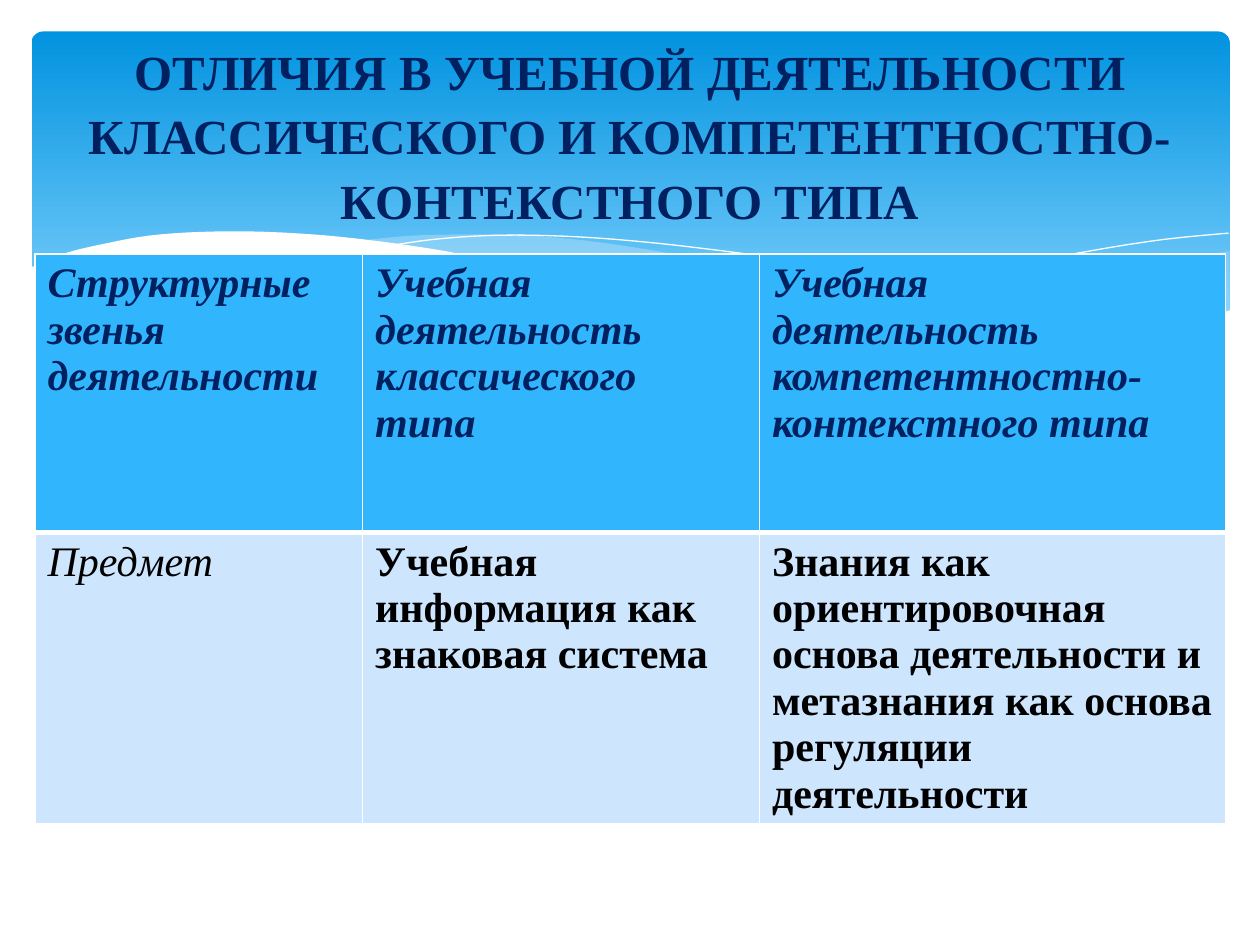
"""Build a slide comparing classical and competence-contextual learning activity."""
from lxml import etree
from pptx import Presentation
from pptx import util as u
from pptx.dml.color import RGBColor
from pptx.enum import shapes, text
from pptx.oxml import ns

WHITE = RGBColor(0xFF, 0xFF, 0xFF)
BLACK = RGBColor(0, 0, 0)
NAVY = RGBColor(0x00, 0x20, 0x60)
SKY_TOP = RGBColor(0x02, 0x93, 0xE0)
SKY_BOTTOM = RGBColor(0x83, 0xD3, 0xFE)
MIST = RGBColor(0xC6, 0xE7, 0xFC)
HEADER_BLUE = RGBColor(0x31, 0xB6, 0xFD)
BODY_BLUE = RGBColor(0xCE, 0xE5, 0xFE)

TITLE = ("ОТЛИЧИЯ В УЧЕБНОЙ ДЕЯТЕЛЬНОСТИ КЛАССИЧЕСКОГО "
         "И КОМПЕТЕНТНОСТНО-КОНТЕКСТНОГО ТИПА")
HEADINGS = ["Структурные звенья деятельности",
            "Учебная\nдеятельность классического типа",
            "Учебная\nдеятельность компетентностно-контекстного типа"]
SUBJECT = ["Предмет",
           "Учебная информация как знаковая система",
           "Знания как ориентировочная основа деятельности и метазнания "
           "как основа регуляции деятельности"]

RIGHT_SWELL = [(702.7, 143.3), (673.2, 149), (641.5, 155.5), (599, 165.6),
               (542.2, 178.6), (475.9, 190.8)]
RIGHT_TROUGH = [(475.9, 190.8), (517, 195.8), (553.7, 199.4), (586, 200.2),
                (621.4, 198), (651.6, 193.7), (678.2, 186.5), (702.7, 177.8)]
MIDDLE_SWELL = [(643, 196.6), (581, 187.2), (533.5, 178.6), (481, 166.3),
                (441.4, 157), (409.7, 149.8), (370, 142.6), (334.8, 137.5),
                (302.4, 134.6), (273.6, 133.9), (236.2, 134.6), (205.9, 137.5)]
MIDDLE_TROUGH = [(205.9, 137.5), (246.2, 143.3), (290.9, 151.9), (323.3, 159.8),
                 (381.6, 172.8), (432.7, 183.6), (478.8, 191.5), (519.8, 197.3),
                 (565.2, 200.2), (603.4, 200.2), (643, 196.6)]
LONG_RIPPLE = [(222.5, 140.4), (247.7, 136.8), (278.6, 134.6), (311.8, 134.6),
               (352, 136.8), (400.3, 141.8), (457.9, 149.8), (523.4, 162.7),
               (572.4, 173.5), (653, 195.8)]
SHORT_RIPPLE = [(441.4, 185), (500.4, 169.2), (558.7, 155.5), (623.5, 143.3),
                (665.3, 136.8), (702, 133.2)]
SHORE = [(703.4, 177.1), (669.6, 188.6), (630, 196.6), (582.5, 199.4),
         (535.7, 197.3), (481, 190.8), (416.9, 180), (362.2, 167.8),
         (321.8, 158.4), (281.5, 149), (244, 141.8), (195.1, 135.4),
         (151.9, 132.5), (116, 132.5), (85.7, 134.6), (61.2, 139),
         (37.4, 144.7), (16.6, 153.4)]
SHORE_BASE = [(16.6, 236.9), (703.4, 236.9)]


def smooth(knots, steps=4):
    """Return points of a Catmull-Rom curve through the knots."""
    ends = [knots[0], *knots, knots[-1]]
    points = [knots[0]]
    for before, start, stop, after in zip(ends, ends[1:], ends[2:], ends[3:]):
        for step in range(1, steps + 1):
            t = step / steps
            points.append(tuple(
                b + (c - a) * t / 2
                + (2 * a - 5 * b + 4 * c - d) * t ** 2 / 2
                + (3 * b - a - 3 * c + d) * t ** 3 / 2
                for a, b, c, d in zip(before, start, stop, after)))
    return points


def write(frame, wording, size=24, color=NAVY, bold=True, italic=False,
          align=text.PP_ALIGN.LEFT, spacing=1.0, font="Times New Roman"):
    """Fill a text frame with uniformly formatted paragraphs."""
    frame.word_wrap = True
    frame.text = wording
    for paragraph in frame.paragraphs:
        paragraph.alignment = align
        paragraph.line_spacing = spacing
        for run in paragraph.runs:
            run.font.name = font
            run.font.size = u.Pt(size)
            run.font.bold = bold
            run.font.italic = italic
            run.font.color.rgb = color


class Deck:
    """Hold the presentation style and the current slide."""

    def __init__(self, width, height):
        self.show = Presentation()
        self.show.slide_width = u.Pt(width)
        self.show.slide_height = u.Pt(height)
        self.slide = self.show.slides.add_slide(self.show.slide_layouts[6])

    def banner(self, *box):
        """Add the rounded gradient panel."""
        sky = self.slide.shapes.add_shape(
            shapes.MSO_SHAPE.ROUNDED_RECTANGLE, *map(u.Pt, box))
        sky.adjustments[0] = 0.034
        sky.shadow.inherit = False
        sky.line.fill.background()
        sky.fill.gradient()
        sky.fill.gradient_angle = 270
        stops = zip(sky.fill.gradient_stops, (SKY_TOP, SKY_BOTTOM), (0, 0.9))
        for stop, color, position in stops:
            stop.color.rgb = color
            stop.position = position

    def wave(self, points, color, opacity=100):
        """Add a filled wave."""
        wave = self.outline(points, True)
        wave.line.fill.background()
        wave.fill.solid()
        wave.fill.fore_color.rgb = color
        if opacity < 100:
            shade = wave.fill._xPr.find(".//" + ns.qn("a:srgbClr"))
            etree.SubElement(shade, ns.qn("a:alpha"), val=str(opacity * 1000))

    def ripple(self, points, color=WHITE):
        """Add an open hairline."""
        ripple = self.outline(points, False)
        ripple.fill.background()
        ripple.line.color.rgb = color
        ripple.line.width = u.Pt(0)

    def outline(self, points, close):
        """Add a freeform through the points."""
        start, *rest = [(u.Pt(x), u.Pt(y)) for x, y in points]
        builder = self.slide.shapes.build_freeform(*start)
        builder.add_line_segments(rest, close=close)
        shape = builder.convert_to_shape()
        shape.shadow.inherit = False
        return shape

    def title(self, wording, *box):
        """Add the centred heading."""
        heading = self.slide.shapes.add_textbox(*map(u.Pt, box)).text_frame
        heading.vertical_anchor = text.MSO_ANCHOR.MIDDLE
        write(heading, wording, size=28, align=text.PP_ALIGN.CENTER, spacing=1.09)

    def table(self, rows, left, top, widths, heights):
        """Add the comparison table with a heading row."""
        grid = self.slide.shapes.add_table(
            len(rows), len(widths), u.Pt(left), u.Pt(top),
            u.Pt(sum(widths)), u.Pt(sum(heights))).table
        grid.first_row = grid.horz_banding = False
        for column, width in zip(grid.columns, widths):
            column.width = u.Pt(width)
        for r, (row, height) in enumerate(zip(rows, heights)):
            grid.rows[r].height = u.Pt(height)
            for c, wording in enumerate(row):
                cell = grid.cell(r, c)
                head = r == 0
                self.borders(cell, top=1 if head else 3, bottom=3 if head else 1)
                cell.fill.solid()
                cell.fill.fore_color.rgb = HEADER_BLUE if head else BODY_BLUE
                write(cell.text_frame, wording, color=NAVY if head else BLACK,
                      bold=head or c > 0, italic=head or c == 0)

    def borders(self, cell, top, bottom, side=1):
        """Draw the cell borders at the given widths."""
        properties = cell._tc.get_or_add_tcPr()
        for edge, width in zip("LRTB", (side, side, top, bottom)):
            line = etree.SubElement(properties, ns.qn("a:ln" + edge),
                                    w=str(u.Pt(width)))
            fill = etree.SubElement(line, ns.qn("a:solidFill"))
            etree.SubElement(fill, ns.qn("a:srgbClr"), val=str(WHITE))


def main():
    """Compose and save the slide."""
    deck = Deck(720, 540)
    deck.banner(18, 18, 684.7, 194.4)
    deck.wave(smooth(RIGHT_SWELL) + smooth(RIGHT_TROUGH), MIST, opacity=29)
    deck.wave(smooth(MIDDLE_SWELL) + smooth(MIDDLE_TROUGH), MIST, opacity=40)
    deck.ripple(smooth(LONG_RIPPLE))
    deck.ripple(smooth(SHORT_RIPPLE))
    deck.wave(smooth(SHORE) + SHORE_BASE, WHITE)
    deck.table([HEADINGS, SUBJECT], 20, 145.2, [187.2, 226.8, 266.4], [159, 166])
    deck.title(TITLE, 36, 26.6, 648, 98.6)
    deck.show.save("out.pptx")


if __name__ == "__main__":
    main()
